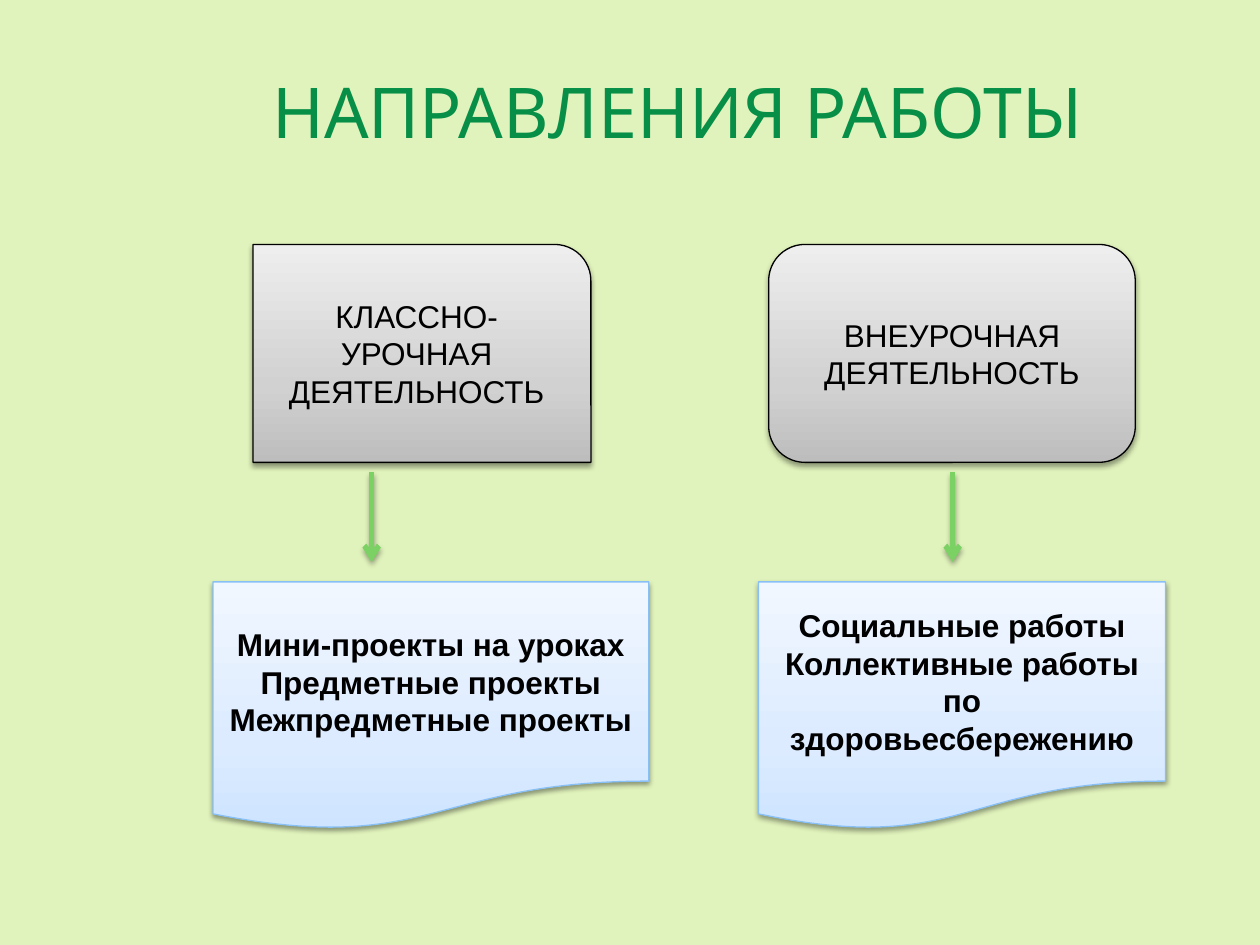
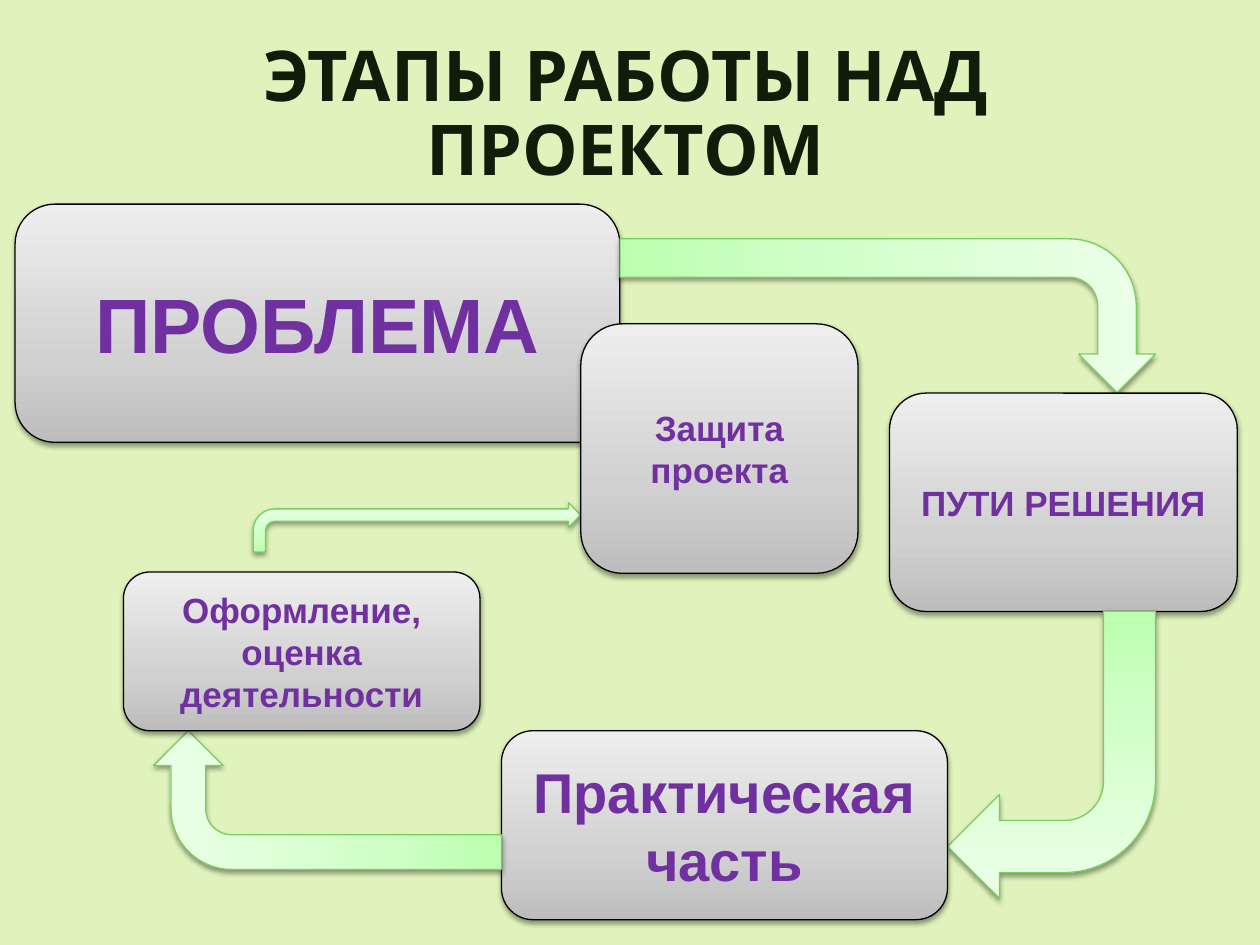
from collections import namedtuple

from lxml import etree
from pptx import Presentation, util as u
from pptx.dml.color import RGBColor
from pptx.enum import shapes, text
from pptx.oxml.ns import qn

COLORS = {
    "background": "E1F3BC", "title": "078F48", "dark title": "0E1E0B",
    "black": "000000", "purple": "7030A0", "link": "7BD163",
}
# Gradient from bottom to top, then the outline
STYLES = {
    "gray": (("BDBDBD", "D1D1D1", "EEEEEE"), "000000"),
    "blue": (("CEE4FF", "DCEBFF", "F1F7FF"), "88C0F6"),
    "green": (("BCFFB0", "CFFFC7", "EDFFE9"), "77CF5E"),
}
STOPS = (0, 35, 100)
KIND = shapes.MSO_SHAPE


class Box(namedtuple("Box", "left top width height")):
    def area(self, left, top, width, height):
        """Inner box given in percent of this one."""
        return Box(self.left + self.width * left / 100,
                   self.top + self.height * top / 100,
                   self.width * width / 100, self.height * height / 100)

    def emu(self):
        return [u.Inches(length) for length in self]


PAGE = Box(0, 0, 10, 7.5)


def rgb(name):
    return RGBColor.from_string(COLORS[name])


def write(frame, *lines, size=18, color="black", font="Arial", bold=False, spacing=None):
    frame.word_wrap = True
    frame.auto_size = text.MSO_AUTO_SIZE.NONE
    frame.vertical_anchor = text.MSO_ANCHOR.MIDDLE
    for number, line in enumerate(lines):
        paragraph = frame.add_paragraph() if number else frame.paragraphs[0]
        paragraph.alignment = text.PP_ALIGN.CENTER
        paragraph.line_spacing = spacing
        run = paragraph.add_run()
        run.text = line
        run.font.size, run.font.name, run.font.bold = u.Pt(size), font, bold
        run.font.color.rgb = rgb(color)


def add_shadow(properties, opacity, distance):
    """Put a soft downward shadow into shape properties."""
    effects = properties.find(qn("a:effectLst"))
    if effects is None:
        effects = etree.SubElement(properties, qn("a:effectLst"))
    shadow = etree.SubElement(effects, qn("a:outerShdw"), blurRad=str(u.Pt(3.1)),
                              dist=str(u.Pt(distance)), dir="5400000", rotWithShape="0")
    shade = etree.SubElement(shadow, qn("a:srgbClr"), val=COLORS["black"])
    etree.SubElement(shade, qn("a:alpha"), val=str(opacity * 1000))


def add_figure(slide, kind, box, style):
    gradient, outline = STYLES[style]
    figure = slide.shapes.add_shape(kind, *box.emu())
    figure.fill.gradient()
    figure.fill.gradient_angle = 90
    properties = figure.element.spPr
    stops = properties.find(".//" + qn("a:gsLst"))
    stops[:] = []
    for position, color in zip(STOPS, gradient):
        stop = etree.SubElement(stops, qn("a:gs"), pos=str(position * 1000))
        etree.SubElement(stop, qn("a:srgbClr"), val=color)
    figure.line.color.rgb = RGBColor.from_string(outline)
    figure.line.width = u.Pt(0.75)
    figure.shadow.inherit = False
    add_shadow(properties, 38, 1.6)
    return figure


def add_link(slide, box):
    """Straight arrow down the left edge of the box."""
    left, top, _, height = box.emu()
    link = slide.shapes.add_connector(shapes.MSO_CONNECTOR.STRAIGHT,
                                      left, top, left, top + height)
    link.line.color.rgb = rgb("link")
    link.line.width = u.Pt(3)
    properties = link.element.spPr
    etree.SubElement(properties.find(qn("a:ln")), qn("a:tailEnd"), type="arrow")
    add_shadow(properties, 35, 1.8)


def add_turn(slide, box, angle):
    """Bent arrow that fills the box once it is rotated."""
    left, top, width, height = box
    if angle % 180:
        shift = (width - height) / 2
        box = Box(left + shift, top - shift, height, width)
    add_figure(slide, KIND.BENT_ARROW, box, "green").rotation = angle


def add_titled_slide(deck, title, box, **style):
    slide = deck.slides.add_slide(deck.slide_layouts[5])
    slide.background.fill.solid()
    slide.background.fill.fore_color.rgb = rgb("background")
    heading = slide.shapes.title
    heading.left, heading.top, heading.width, heading.height = box.emu()
    write(heading.text_frame, title, size=40, font="Karla", spacing=0.88, **style)
    return slide


def add_direction(slide, box, kind, activity, works, inset, width, link):
    """Activity card above, its kinds of work below, an arrow between them."""
    card = add_figure(slide, kind, box.area(inset, 0, width, 37.2), "gray")
    write(card.text_frame, activity)
    add_link(slide, box.area(link, 38.9, 0, 15.3))
    document = add_figure(slide, KIND.FLOWCHART_DOCUMENT, box.area(0, 57.6, 100, 42.4), "blue")
    write(document.text_frame, *works, bold=True)


def build_directions(deck):
    slide = add_titled_slide(deck, "НАПРАВЛЕНИЯ РАБОТЫ", PAGE.area(12.5, 4, 82.5, 16.67),
                             color="title")
    add_direction(slide, PAGE.area(16.9, 25.87, 34.6, 62), KIND.ROUND_1_RECTANGLE,
                  "КЛАССНО-УРОЧНАЯ ДЕЯТЕЛЬНОСТЬ",
                  ("Мини-проекты на уроках", "Предметные проекты", "Межпредметные проекты"),
                  inset=9.2, width=77.5, link=36.4)
    add_direction(slide, PAGE.area(60.2, 25.87, 32.3, 62), KIND.ROUNDED_RECTANGLE,
                  "ВНЕУРОЧНАЯ ДЕЯТЕЛЬНОСТЬ",
                  ("Социальные работы", "Коллективные работы по здоровьесбережению"),
                  inset=2.5, width=90.1, link=47.7)


def build_stages(deck):
    slide = add_titled_slide(deck, "ЭТАПЫ РАБОТЫ НАД ПРОЕКТОМ", PAGE.area(4.3, 4, 90.7, 16.67),
                             color="dark title", bold=True)
    # Stage, text size, card, then the arrow to the next stage and its angle
    stages = (
        ("ПРОБЛЕМА", 44, (1.2, 21.6, 48, 25.2), (49.2, 25.27, 42.5, 16.27), 90),
        ("ПУТИ РЕШЕНИЯ", 20, (70.6, 41.6, 27.6, 23.1), (75.2, 64.67, 16.5, 30.4), 180),
        ("Практическая часть", 32, (39.8, 77.33, 35.4, 20), (12.2, 77.33, 27.6, 14.67), 270),
        ("Оформление, оценка деятельности", 20, (9.8, 60.53, 28.3, 16.8),
         (20.1, 53.2, 26, 5.2), 0),
        ("Защита проекта", 20, (46.1, 34.27, 22, 26.4), None, 0),
    )
    for stage, size, card_area, turn_area, angle in stages:
        card = add_figure(slide, KIND.ROUNDED_RECTANGLE, PAGE.area(*card_area), "gray")
        write(card.text_frame, stage, size=size, color="purple", bold=True)
        if turn_area:
            add_turn(slide, PAGE.area(*turn_area), angle)


def main():
    deck = Presentation()
    deck.slide_width, deck.slide_height = PAGE.emu()[2:]
    build_directions(deck)
    build_stages(deck)
    deck.save("out.pptx")


if __name__ == "__main__":
    main()
